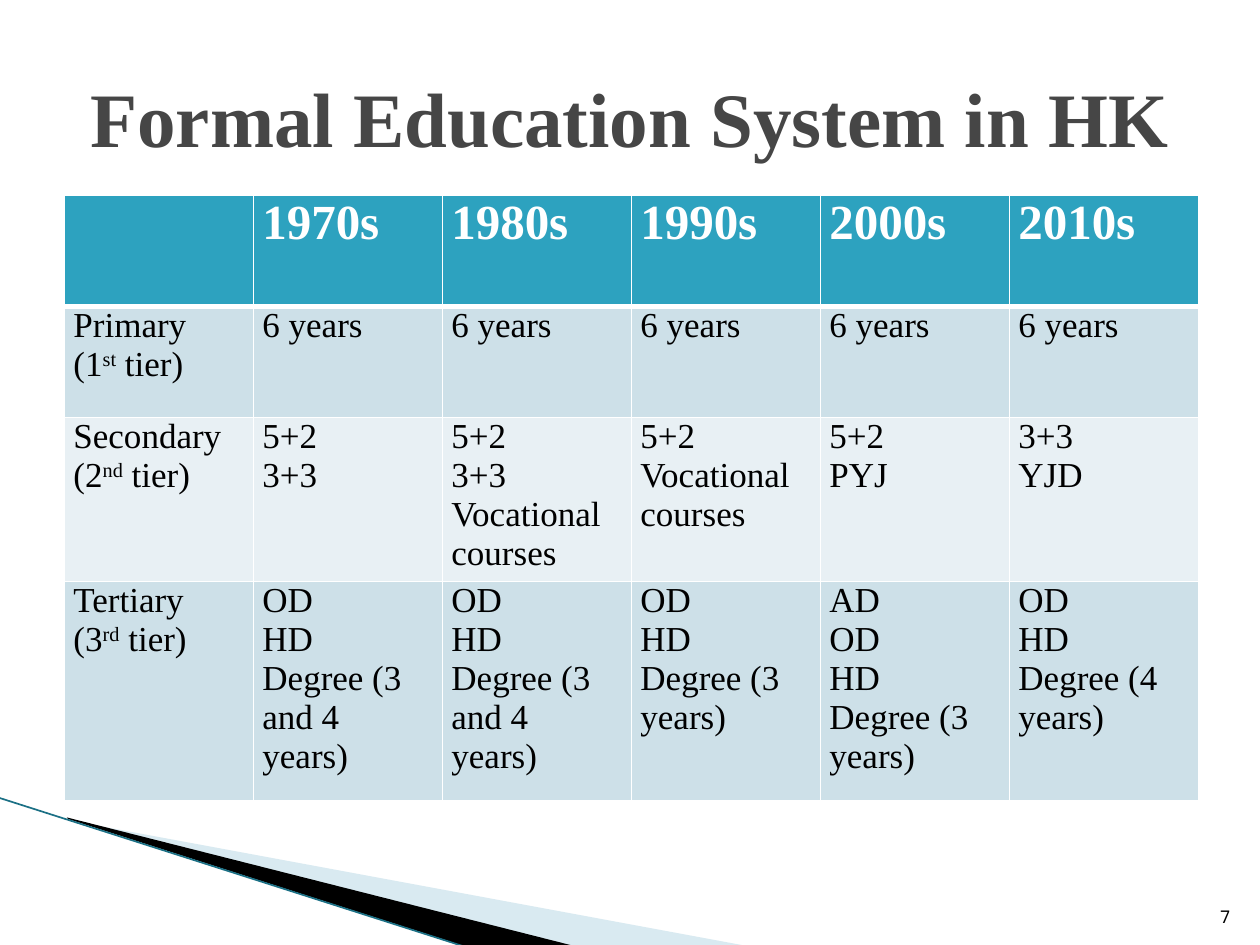
from dataclasses import dataclass

from pptx import Presentation
from pptx.dml.color import RGBColor
from pptx.enum.shapes import MSO_CONNECTOR
from pptx.enum.text import MSO_ANCHOR, PP_ALIGN
from pptx.oxml.ns import qn
from pptx.util import Cm, Pt
from lxml.etree import SubElement


@dataclass(frozen=True)
class Theme:
    serif: str = "Times New Roman"
    mono: str = "Noto Sans Mono"
    title: int = 44
    head: int = 28
    body: int = 20
    small: int = 10
    grey: str = "464646"
    black: str = "000000"
    white: str = "FFFFFF"
    teal: str = "2DA2BF"
    band: tuple = ("CDE0E8", "E8F0F4")
    pale: str = "A0CBDC"
    edge: str = "1B7085"


THEME = Theme()

HEADS = ["", "1970s", "1980s", "1990s", "2000s", "2010s"]
# A caret pair marks raised text, a newline starts a paragraph
ROWS = [
    ["Primary\n(1^st^ tier)"] + ["6 years"] * 5,
    ["Secondary\n(2^nd^ tier)", "5+2\n3+3", "5+2\n3+3\nVocational courses",
     "5+2\nVocational courses", "5+2\nPYJ", "3+3\nYJD"],
    ["Tertiary\n(3^rd^ tier)"] + ["OD\nHD\nDegree (3 and 4 years)"] * 2
    + ["OD\nHD\nDegree (3 years)", "AD\nOD\nHD\nDegree (3 years)",
       "OD\nHD\nDegree (4 years)"],
]
COL = 3.81
TALL = [2.24, 2.24, 3.3, 4.42]


def write(frame, text, size=THEME.body, color=THEME.black, bold=False,
          font=THEME.serif, align=PP_ALIGN.LEFT):
    for row, line in enumerate(text.split("\n")):
        para = frame.add_paragraph() if row else frame.paragraphs[0]
        para.alignment = align
        for part, words in enumerate(line.split("^")):
            run = para.add_run()
            run.text = words
            run.font.name = font
            run.font.size = Pt(size)
            run.font.bold = bold
            run.font.color.rgb = RGBColor.from_string(color)
            if part % 2:
                run.font._element.set("baseline", "30000")


def add_text(slide, text, box, anchor, **style):
    frame = slide.shapes.add_textbox(*map(Cm, box)).text_frame
    frame.word_wrap = True
    frame.vertical_anchor = anchor
    write(frame, text, **style)


def add_wedge(slide, points, color, alpha=None):
    start, *rest = [(Cm(x), Cm(y)) for x, y in points]
    form = slide.shapes.build_freeform(*start)
    form.add_line_segments(rest)
    wedge = form.convert_to_shape()
    wedge.shadow.inherit = False
    wedge.line.fill.background()
    wedge.fill.solid()
    wedge.fill.fore_color.rgb = RGBColor.from_string(color)
    if alpha:
        tint = wedge._element.spPr.find(".//" + qn("a:srgbClr"))
        SubElement(tint, qn("a:alpha"), val=str(alpha * 1000))


def add_line(slide, ends, color, width):
    line = slide.shapes.add_connector(MSO_CONNECTOR.STRAIGHT, *map(Cm, ends))
    line.line.color.rgb = RGBColor.from_string(color)
    line.line.width = Pt(width)
    SubElement(line._element.spPr, qn("a:effectLst"))


def set_edges(cell, widths):
    # Borders must come before the fill in the cell properties
    props = cell._tc.get_or_add_tcPr()
    for side, width in widths.items():
        edge = SubElement(props, qn("a:ln" + side), w=str(Pt(width)))
        fill = SubElement(edge, qn("a:solidFill"))
        SubElement(fill, qn("a:srgbClr"), val=THEME.white)


def add_grid(slide, left, top):
    rows = [HEADS] + ROWS
    size = (COL * len(HEADS), sum(TALL))
    grid = slide.shapes.add_table(
        len(rows), len(HEADS), *map(Cm, (left, top) + size)).table
    for col in grid.columns:
        col.width = Cm(COL)
    for r, texts in enumerate(rows):
        grid.rows[r].height = Cm(TALL[r])
        fill = THEME.band[(r - 1) % 2] if r else THEME.teal
        style = {} if r else dict(size=THEME.head, color=THEME.white, bold=True)
        edges = {"L": 1, "R": 1, "T": 3 if r == 1 else 1, "B": 1 if r else 3}
        for c, text in enumerate(texts):
            cell = grid.cell(r, c)
            cell.margin_left = cell.margin_right = Cm(0.18)
            cell.margin_top = cell.margin_bottom = 0
            set_edges(cell, edges)
            cell.fill.solid()
            cell.fill.fore_color.rgb = RGBColor.from_string(fill)
            if text:
                write(cell.text_frame, text, **style)


def main():
    deck = Presentation()
    deck.slide_width, deck.slide_height = Cm(25.4), Cm(19.05)
    slide = deck.slides.add_slide(deck.slide_layouts[6])

    # Corner decoration
    add_wedge(slide, [(1.4, 16.54), (15.11, 19.08), (11.58, 19.08),
                      (1.4, 16.51)], THEME.pale, alpha=40)
    add_wedge(slide, [(1.35, 16.48), (11.61, 19.08), (9.45, 19.1),
                      (1.37, 16.51)], THEME.black)
    add_line(slide, (-0.03, 16.08, 9.42, 19.1), THEME.edge, 0.95)

    # Table of school tiers by decade
    add_grid(slide, 1.3, 3.94)

    # Title and page number
    add_text(slide, "Formal Education System in HK", (1.27, 0.76, 22.86, 3.18),
             MSO_ANCHOR.MIDDLE, size=THEME.title, color=THEME.grey, bold=True,
             align=PP_ALIGN.CENTER)
    add_text(slide, "7", (24.03, 17.8, 1.02, 1.02), MSO_ANCHOR.BOTTOM,
             size=THEME.small, font=THEME.mono, align=PP_ALIGN.RIGHT)

    deck.save("out.pptx")


if __name__ == "__main__":
    main()
